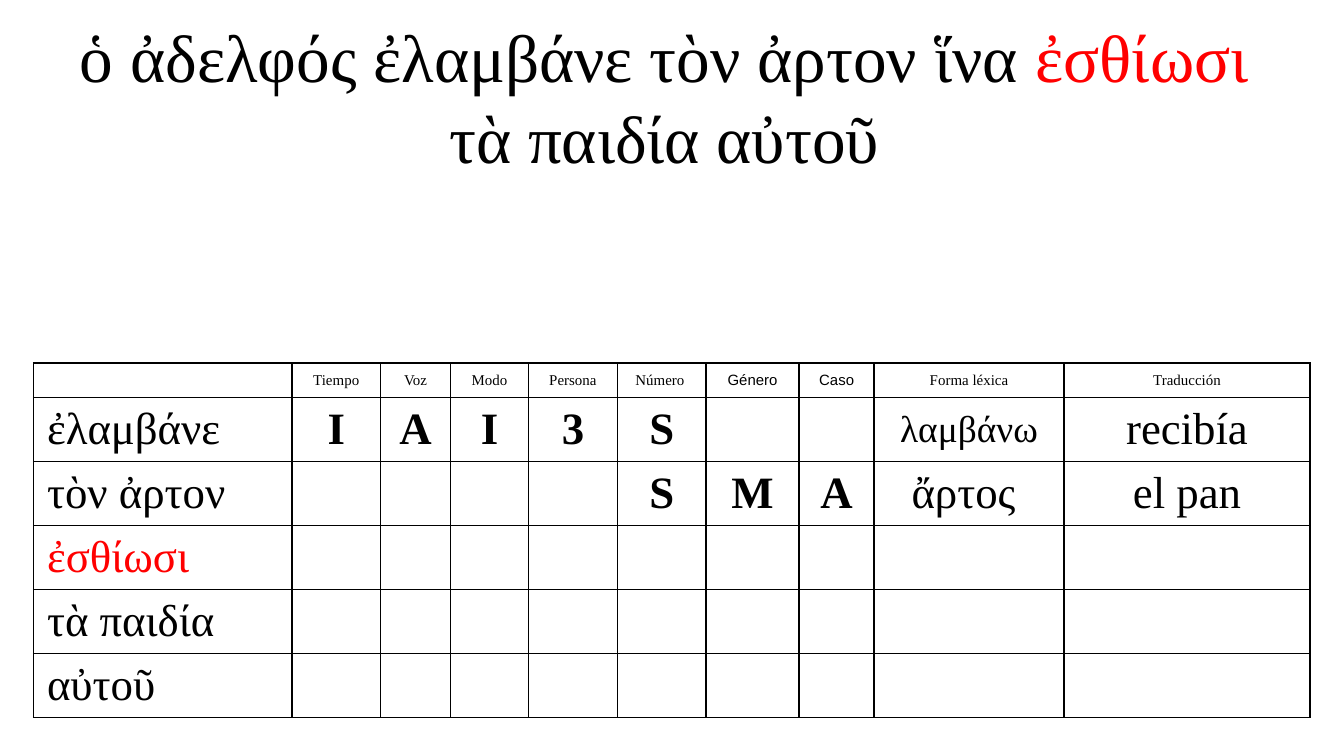
from lxml import etree
from pptx import Presentation
from pptx.dml.color import RGBColor
from pptx.enum.text import MSO_ANCHOR, MSO_AUTO_SIZE, PP_ALIGN
from pptx.oxml.ns import qn
from pptx.util import Inches, Pt

LEFT, CENTER = PP_ALIGN.LEFT, PP_ALIGN.CENTER
MIDDLE = MSO_ANCHOR.MIDDLE
FIT = MSO_AUTO_SIZE.SHAPE_TO_FIT_TEXT
TITLE_ONLY = 5

COLORS = {"ink": "000000", "mark": "FF0000"}
SERIF, SANS = "Times New Roman", "Arial"

COLS = [1.92, 0.66, 0.52, 0.58, 0.66, 0.66, 0.69, 0.56, 1.41, 1.83]
HEAD_H = 0.26
THICK, THIN = 1, 0.75
MARKED = "ἐσθίωσι"
SANS_HEADS = ("Género", "Caso")
LEX = 8
ROWS = [
    ["", "Tiempo", "Voz", "Modo", "Persona", "Número ", "Género", "Caso",
     "Forma léxica", "Traducción"],
    ["ἐλαμβάνε", "I", "A", "I", "3", "S", "", "", "λαμβάνω", "recibía"],
    ["τὸν ἀρτον", "", "", "", "", "S", "M", "A", "ἄρτος ", "el pan"],
    [MARKED] + [""] * 9,
    ["τὰ παιδία"] + [""] * 9,
    ["αὐτοῦ"] + [""] * 9,
]


def put(para, text, size=24, font=SERIF, color="ink", bold=False, align=CENTER):
    """Append a formatted run; empty text only sets the line's size."""
    para.alignment = align
    if not text:
        etree.SubElement(para._p, qn("a:endParaRPr"), sz=str(size * 100))
        return
    run = para.add_run()
    run.text = text
    run.font.size = Pt(size)
    run.font.name = font
    run.font.bold = bold
    run.font.color.rgb = RGBColor.from_string(COLORS[color])


def border(cell, top):
    """Rule all four sides of a cell."""
    props = cell._tc.get_or_add_tcPr()
    widths = {"L": THICK, "R": THICK, "T": top, "B": THIN}
    for i, (side, width) in enumerate(widths.items()):
        line = etree.Element(qn("a:ln" + side), w=str(Pt(width)))
        fill = etree.SubElement(line, qn("a:solidFill"))
        etree.SubElement(fill, qn("a:srgbClr"), val=COLORS["ink"])
        props.insert(i, line)


def style(row, col, text):
    if row == 0:
        return {"size": 8, "font": SANS if text in SANS_HEADS else SERIF}
    if col == 0:
        return {"align": LEFT, "color": "mark" if text == MARKED else "ink"}
    if col == LEX:
        return {"size": 20 if row == 1 else 24}
    return {"bold": col < LEX}


def heading(slide, x, y, w, h):
    title = slide.shapes.title
    title.left, title.top = Inches(x), Inches(y)
    title.width, title.height = Inches(w), Inches(h)
    frame = title.text_frame
    frame.word_wrap = True
    frame.auto_size = FIT
    frame.vertical_anchor = MIDDLE
    first = frame.paragraphs[0]
    put(first, "ὁ ἀδελφός ἐλαμβάνε τὸν ἀρτον ἵνα ", size=36)
    put(first, MARKED + " ", size=36, color="mark")
    put(frame.add_paragraph(), "τὰ παιδία αὐτοῦ ", size=36)


def parsing(slide, x, y, w, h):
    """Table that parses each word of the sentence."""
    table = slide.shapes.add_table(len(ROWS), len(COLS), Inches(x), Inches(y),
                                   Inches(w), Inches(h)).table
    table.first_row = table.horz_banding = False
    for col, width in zip(table.columns, COLS):
        col.width = Inches(width * w / sum(COLS))
    tall = (h - HEAD_H) / (len(ROWS) - 1)
    for r, texts in enumerate(ROWS):
        table.rows[r].height = Inches(tall if r else HEAD_H)
        for c, text in enumerate(texts):
            cell = table.cell(r, c)
            cell.fill.background()
            cell.vertical_anchor = MIDDLE
            side = 0 if (r, c) == (1, 2) else 0.1
            cell.margin_left = cell.margin_right = Inches(side)
            cell.margin_top = cell.margin_bottom = Pt(2.7)
            put(cell.text_frame.paragraphs[0], text, **style(r, c, text))
            border(cell, THIN if r else THICK)


def main():
    deck = Presentation()
    deck.slide_width = Inches(10)
    deck.slide_height = deck.slide_width * 9 // 16
    slide = deck.slides.add_slide(deck.slide_layouts[TITLE_ONLY])
    heading(slide, 0.17, 0.06, 9.67, 1.31)
    parsing(slide, 0.25, 2.7, 9.5, 2.64)
    deck.save("out.pptx")


if __name__ == "__main__":
    main()
